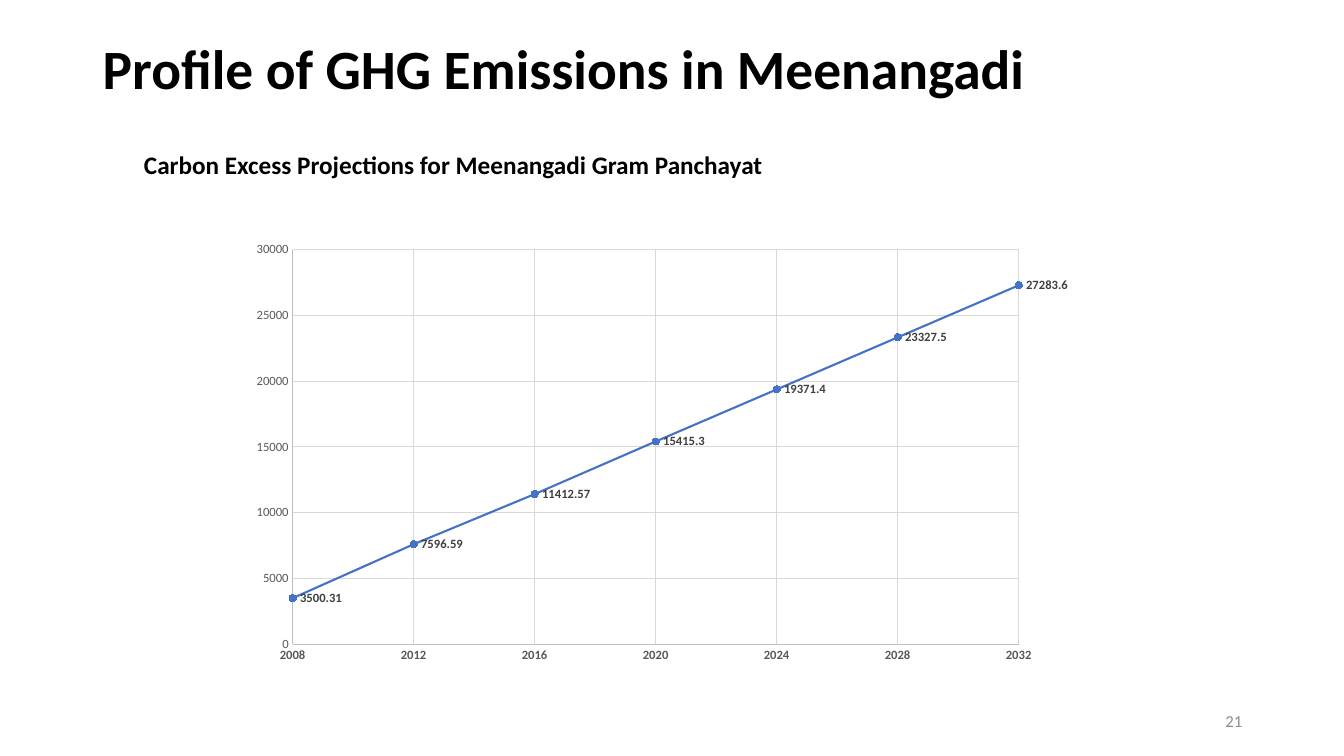
import dataclasses

import lxml.etree
import pptx
import pptx.chart.data
import pptx.chart.datalabel
import pptx.dml.color
import pptx.enum.chart
import pptx.enum.text
import pptx.oxml.ns
import pptx.util

Inches = pptx.util.Inches
Pt = pptx.util.Pt


def rgb(code):
    return pptx.dml.color.RGBColor.from_string(code)


@dataclasses.dataclass(frozen=True)
class Theme:
    font: str = "Calibri"
    black: str = "000000"
    page_number: str = "8C8C8C"
    axis_text: str = "595959"
    axis_line: str = "BFBFBF"
    grid: str = "D9D9D9"
    label: str = "404040"
    series: str = "4472C4"
    title_size: float = 39.6
    subtitle_size: float = 18
    number_size: float = 12
    chart_size: float = 9


THEME = Theme()
FIRST_YEAR, LAST_YEAR, YEAR_STEP = 2008, 2032, 4
CARBON_EXCESS = [3500.31, 7596.59, 11412.57, 15415.3, 19371.4, 23327.5, 27283.6]


def style_font(font, size, color, bold=False):
    font.name = THEME.font
    font.size = Pt(size)
    font.bold = bold
    font.color.rgb = rgb(color)


def add_text(page, box, text, size, color, bold=False, anchor="MIDDLE", align="LEFT", spacing=1.0):
    frame = page.shapes.add_textbox(*map(Inches, box)).text_frame
    frame.word_wrap = True
    frame.vertical_anchor = pptx.enum.text.MSO_ANCHOR[anchor]
    frame.text = text
    para = frame.paragraphs[0]
    para.alignment = pptx.enum.text.PP_ALIGN[align]
    para.line_spacing = spacing
    style_font(para.runs[0].font, size, color, bold)


def style_axis(axis, low, high, step, bold=False):
    axis.minimum_scale, axis.maximum_scale, axis.major_unit = low, high, step
    axis.major_tick_mark = axis.minor_tick_mark = pptx.enum.chart.XL_TICK_MARK.NONE
    axis.has_major_gridlines = True
    style_font(axis.tick_labels.font, THEME.chart_size, THEME.axis_text, bold)
    for line, color in ((axis.format.line, THEME.axis_line),
                        (axis.major_gridlines.format.line, THEME.grid)):
        line.color.rgb = rgb(color)
        line.width = Pt(0.75)


def style_series(series):
    series.format.line.color.rgb = rgb(THEME.series)
    series.format.line.width = Pt(1.5)
    marker = series.marker
    marker.style = pptx.enum.chart.XL_MARKER_STYLE.CIRCLE
    marker.size = 5
    marker.format.fill.solid()
    marker.format.fill.fore_color.rgb = rgb(THEME.series)
    marker.format.line.color.rgb = rgb(THEME.series)
    labels = pptx.chart.datalabel.DataLabels(series._element.get_or_add_dLbls())
    labels.show_value = True
    labels.position = pptx.enum.chart.XL_LABEL_POSITION.RIGHT
    style_font(labels.font, THEME.chart_size, THEME.label, bold=True)


def place_plot(chart, **fractions):
    """Fix the inner plot area as fractions of the chart box."""
    qn = pptx.oxml.ns.qn
    area = chart._chartSpace.find(".//" + qn("c:plotArea"))
    for layout in area.findall(qn("c:layout")):
        area.remove(layout)
    layout = lxml.etree.Element(qn("c:layout"))
    area.insert(0, layout)
    manual = lxml.etree.SubElement(layout, qn("c:manualLayout"))
    settings = {"layoutTarget": "inner", "xMode": "edge", "yMode": "edge", **fractions}
    for name, value in settings.items():
        lxml.etree.SubElement(manual, qn("c:" + name)).set("val", str(value))


def add_projection_chart(page, box):
    chart_data = pptx.chart.data.XyChartData()
    points = chart_data.add_series("Series 1")
    for year, excess in zip(range(FIRST_YEAR, LAST_YEAR + 1, YEAR_STEP), CARBON_EXCESS):
        points.add_data_point(year, excess)
    chart = page.shapes.add_chart(
        pptx.enum.chart.XL_CHART_TYPE.XY_SCATTER_LINES, *map(Inches, box), chart_data).chart
    chart.has_title = False
    chart.has_legend = False
    style_font(chart.font, 10, THEME.black)
    style_axis(chart.category_axis, FIRST_YEAR, LAST_YEAR, YEAR_STEP, bold=True)
    style_axis(chart.value_axis, 0, 30000, 5000)
    style_series(chart.plots[0].series[0])
    place_plot(chart, x=0.094, y=0.051, w=0.776, h=0.842)


def build_emissions_page(page):
    add_text(page, (0.92, 0.4, 10.71, 0.62), "Profile of GHG Emissions in Meenangadi",
             THEME.title_size, THEME.black, bold=True, spacing=0.9)
    add_text(page, (1.33, 1.43, 11.46, 0.4),
             "Carbon Excess Projections for Meenangadi Gram Panchayat",
             THEME.subtitle_size, THEME.black, bold=True, anchor="TOP")
    add_projection_chart(page, (2.03, 2.24, 9.28, 4.65))
    add_text(page, (9.42, 6.95, 3, 0.4), "21", THEME.number_size, THEME.page_number,
             align="RIGHT")


def main():
    deck = pptx.Presentation()
    deck.slide_width, deck.slide_height = Inches(13.33), Inches(7.5)
    build_emissions_page(deck.slides.add_slide(deck.slide_layouts[6]))
    deck.save("out.pptx")


if __name__ == "__main__":
    main()
